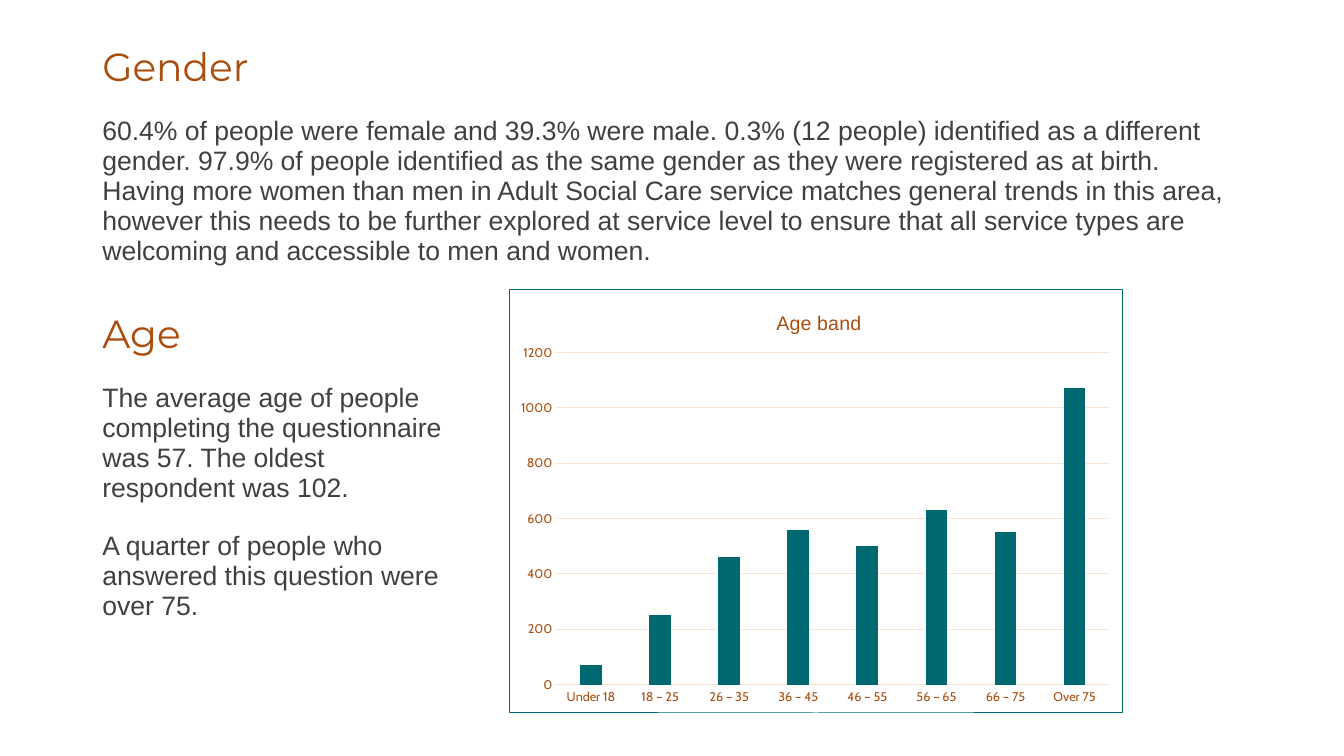
import lxml.etree
import pptx
import pptx.chart.data
import pptx.dml.color
import pptx.enum.chart
import pptx.enum.text
import pptx.util

Cm = pptx.util.Cm
Pt = pptx.util.Pt

GENDER_TEXT = [
    "60.4% of people were female and 39.3% were male. 0.3% (12 people) identified as a "
    "different gender. 97.9% of people identified as the same gender as they were registered "
    "as at birth. Having more women than men in Adult Social Care service matches general "
    "trends in this area, however this needs to be further explored at service level to "
    "ensure that all service types are welcoming and accessible to men and women."
]
AGE_TEXT = [
    "The average age of people completing the questionnaire was 57. "
    "The oldest respondent was 102.",
    "A quarter of people who answered this question were over 75.",
]
AGE_BANDS = {
    "Under 18": 70, "18 – 25": 250, "26 – 35": 460, "36 – 45": 560,
    "46 – 55": 500, "56 – 65": 630, "66 – 75": 550, "Over 75": 1070,
}

RUST, TEAL, PEACH, GREY = "AA4E0F", "006871", "FBE3D2", "423F3F"
HEADING = {"name": "Montserrat", "size": Pt(28)}
BODY = {"name": "Arial", "size": Pt(19)}
CHART_TITLE = {"name": "Arial", "size": Pt(14), "bold": False}
CHART_TEXT = {"name": "Cabin", "size": Pt(10), "bold": False}
AXIS_TEXT = {"name": "Cabin", "size": Pt(9), "bold": False}

LEFT, FULL_WIDTH, AGE_WIDTH = 2.33, 29.21, 9.5
HEADING_HEIGHT = 2.18
# text, left/top/width/height in cm, format, colour, line spacing
TEXT_BOXES = [
    (["Gender"], (LEFT, 0.64, FULL_WIDTH, HEADING_HEIGHT), HEADING, RUST, 0.9),
    (GENDER_TEXT, (LEFT, 2.82, FULL_WIDTH, 4.55), BODY, GREY, 0.94),
    (["Age"], (LEFT, 7.37, FULL_WIDTH, HEADING_HEIGHT), HEADING, RUST, 0.9),
    (AGE_TEXT, (LEFT, 9.53, AGE_WIDTH, 6.71), BODY, GREY, 0.94),
]
CHART_PLACE = (12.82, 7.28, 15.47, 10.7)


def paint(color_format, hex_color):
    color_format.rgb = pptx.dml.color.RGBColor.from_string(hex_color)


def apply(target, values):
    for name, value in values.items():
        setattr(target, name, value)


def style_font(font, values, hex_color):
    apply(font, values)
    paint(font.color, hex_color)


def style_line(line, hex_color):
    line.width = Pt(0.75)
    paint(line.color, hex_color)


def add_text(slide, texts, place, values, hex_color, spacing):
    frame = slide.shapes.add_textbox(*map(Cm, place)).text_frame
    frame.word_wrap = True
    if values is HEADING:
        frame.vertical_anchor = pptx.enum.text.MSO_ANCHOR.MIDDLE
    for index, text in enumerate(texts):
        para = frame.paragraphs[0] if index == 0 else frame.add_paragraph()
        para.line_spacing = spacing
        if index:
            para.space_before = Pt(20.5)
        span = para.add_run()
        span.text = text
        style_font(span.font, values, hex_color)


def chart_xml(body):
    return lxml.etree.fromstring(
        '<c:part xmlns:c="http://schemas.openxmlformats.org/drawingml/2006/chart" '
        'xmlns:a="http://schemas.openxmlformats.org/drawingml/2006/main">'
        f"{body}</c:part>"
    )[0]


def set_layout(parent, index, **fractions):
    """Place a chart part by fractions of the chart's size."""
    for old in parent.xpath("c:layout"):
        parent.remove(old)
    target = '<c:layoutTarget val="inner"/>' if "w" in fractions else ""
    modes = "".join(f'<c:{axis}Mode val="edge"/>' for axis in "xy")
    values = "".join(f'<c:{name} val="{value}"/>' for name, value in fractions.items())
    parent.insert(index, chart_xml(
        f"<c:layout><c:manualLayout>{target}{modes}{values}</c:manualLayout></c:layout>"))


def add_age_chart(slide):
    data = pptx.chart.data.CategoryChartData()
    data.categories = list(AGE_BANDS)
    data.add_series("Series 1", list(AGE_BANDS.values()))
    kind = pptx.enum.chart.XL_CHART_TYPE.COLUMN_CLUSTERED
    chart = slide.shapes.add_chart(kind, *map(Cm, CHART_PLACE), data).chart
    chart.has_legend = False
    style_font(chart.font, CHART_TEXT, RUST)

    chart.has_title = True
    para = chart.chart_title.text_frame.paragraphs[0]
    span = para.add_run()
    span.text = "Age band"
    style_font(span.font, CHART_TITLE, RUST)

    for axis in (chart.category_axis, chart.value_axis):
        axis.major_tick_mark = axis.minor_tick_mark = pptx.enum.chart.XL_TICK_MARK.NONE
        style_font(axis.tick_labels.font, AXIS_TEXT, RUST)
    style_line(chart.category_axis.format.line, PEACH)
    chart.value_axis.format.line.fill.background()
    chart.value_axis.has_major_gridlines = True
    style_line(chart.value_axis.major_gridlines.format.line, PEACH)
    apply(chart.value_axis,
          {"minimum_scale": 0, "maximum_scale": 1200, "major_unit": 200})

    plot = chart.plots[0]
    apply(plot, {"gap_width": 219, "overlap": -27, "vary_by_categories": False})
    fill = plot.series[0].format.fill
    fill.solid()
    paint(fill.fore_color, TEAL)

    space = chart.font._element.xpath("ancestor::c:chartSpace")[0]
    set_layout(space.xpath("c:chart/c:title")[0], 1, x=0.43, y=0.04)
    set_layout(space.xpath("c:chart/c:plotArea")[0], 0, x=0.077, y=0.149, w=0.902, h=0.784)
    space.xpath("c:txPr")[0].addprevious(chart_xml(
        f'<c:spPr><a:noFill/><a:ln w="{Pt(0.75)}"><a:solidFill>'
        f'<a:srgbClr val="{TEAL}"/></a:solidFill></a:ln></c:spPr>'))


def main():
    deck = pptx.Presentation()
    apply(deck, {"slide_width": Cm(33.87), "slide_height": Cm(19.05)})
    slide = deck.slides.add_slide(deck.slide_layouts[6])
    for text_box in TEXT_BOXES:
        add_text(slide, *text_box)
    add_age_chart(slide)
    deck.save("out.pptx")


if __name__ == "__main__":
    main()
